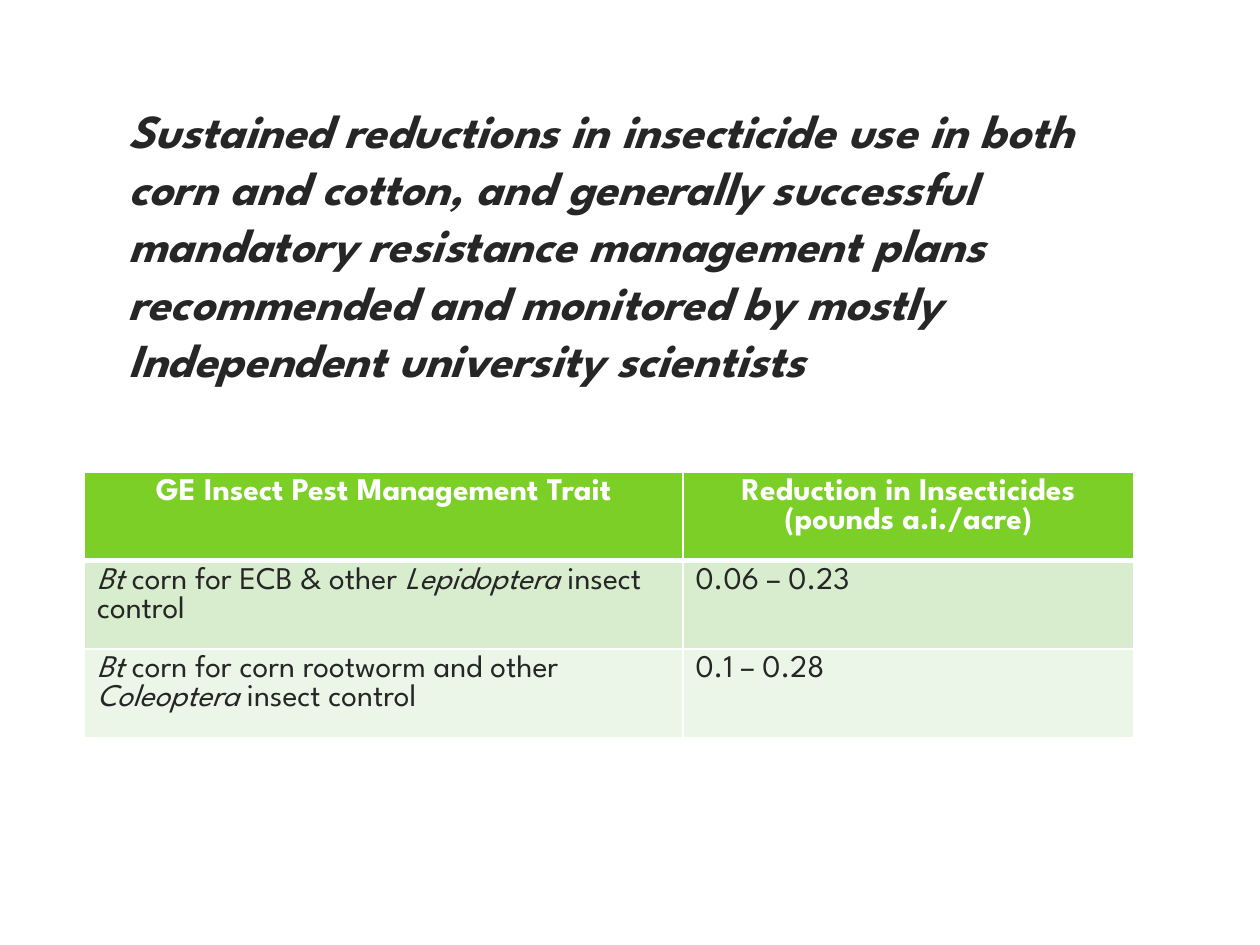
from lxml.etree import SubElement
from pptx import Presentation
from pptx.dml.color import RGBColor
from pptx.enum.text import PP_ALIGN as Align
from pptx.oxml.ns import qn
from pptx.util import Inches, Pt

FONT = "League Spartan"
WHITE, INK = "FFFFFF", "262626"
HEADER_FILL, ROW_FILLS = "7BCF27", ("D7EDCD", "ECF6E8")
WIDTH, HEIGHT = Inches(10), Inches(7.5)

STATEMENT = (
    "Sustained reductions in insecticide use in both",
    "corn and cotton, and generally successful",
    "mandatory resistance management plans",
    "recommended and monitored by mostly",
    "Independent university scientists",
)

# Each cell is a list of (text, italic) runs
HEADER = (
    [("GE Insect Pest Management Trait", False)],
    [("Reduction in Insecticides (pounds a.i./acre)", False)],
)
BODY = (
    ([("Bt", True), (" corn for ECB & other ", False),
      ("Lepidoptera", True), (" insect control", False)],
     [("0.06 – 0.23", False)]),
    ([("Bt", True), (" corn for corn rootworm and other ", False),
      ("Coleoptera ", True), ("insect control", False)],
     [("0.1 – 0.28", False)]),
)


def color(value):
    return RGBColor.from_string(value)


def add_text(paragraph, text, size=18, ink=INK, bold=False, italic=False):
    run = paragraph.add_run()
    run.text = text
    font = run.font
    font.name, font.size = FONT, Pt(size)
    font.bold, font.italic = bold, italic
    font.color.rgb = color(ink)


def add_statement(slide):
    box = slide.shapes.add_textbox(
        WIDTH * 0.092, HEIGHT * 0.1, WIDTH * 0.858, HEIGHT * 0.316)
    frame = box.text_frame
    frame.word_wrap = True
    for index, line in enumerate(STATEMENT):
        paragraph = frame.add_paragraph() if index else frame.paragraphs[0]
        properties = paragraph._p.get_or_add_pPr()
        properties.set("marL", str(Inches(0.38)))
        properties.set("indent", str(-Inches(0.38)))
        paragraph.line_spacing = Pt(32.7)
        add_text(paragraph, line, size=27, bold=True, italic=True)


def set_borders(cell, **widths):
    properties = cell._tc.get_or_add_tcPr()
    for side in "LRTB":
        width = Pt(widths.get(side, 1))
        line = SubElement(properties, qn(f"a:ln{side}"), w=str(width))
        fill = SubElement(line, qn("a:solidFill"))
        SubElement(fill, qn("a:srgbClr"), val=WHITE)


def fill_row(row, contents, fill, borders, align=Align.LEFT, **style):
    for cell, runs in zip(row.cells, contents):
        set_borders(cell, **borders)
        cell.fill.solid()
        cell.fill.fore_color.rgb = color(fill)
        paragraph = cell.text_frame.paragraphs[0]
        paragraph.alignment = align
        for text, italic in runs:
            add_text(paragraph, text, italic=italic, **style)


def add_trait_table(slide):
    frame = slide.shapes.add_table(
        1 + len(BODY), len(HEADER),
        WIDTH * 0.067, HEIGHT * 0.5, WIDTH * 0.833, HEIGHT * 0.28)
    table = frame.table
    for column, share in zip(table.columns, (0.475, 0.358)):
        column.width = int(WIDTH * share)

    # A thick rule parts the header from the body
    header, *body = table.rows
    fill_row(header, HEADER, HEADER_FILL, {"B": 3},
             align=Align.CENTER, ink=WHITE, bold=True)
    for index, (row, contents) in enumerate(zip(body, BODY)):
        borders = {} if index else {"T": 3}
        fill_row(row, contents, ROW_FILLS[index % 2], borders)


def main():
    presentation = Presentation()
    presentation.slide_width, presentation.slide_height = WIDTH, HEIGHT
    slide = presentation.slides.add_slide(presentation.slide_layouts[6])
    add_statement(slide)
    add_trait_table(slide)
    presentation.save("out.pptx")


if __name__ == "__main__":
    main()
